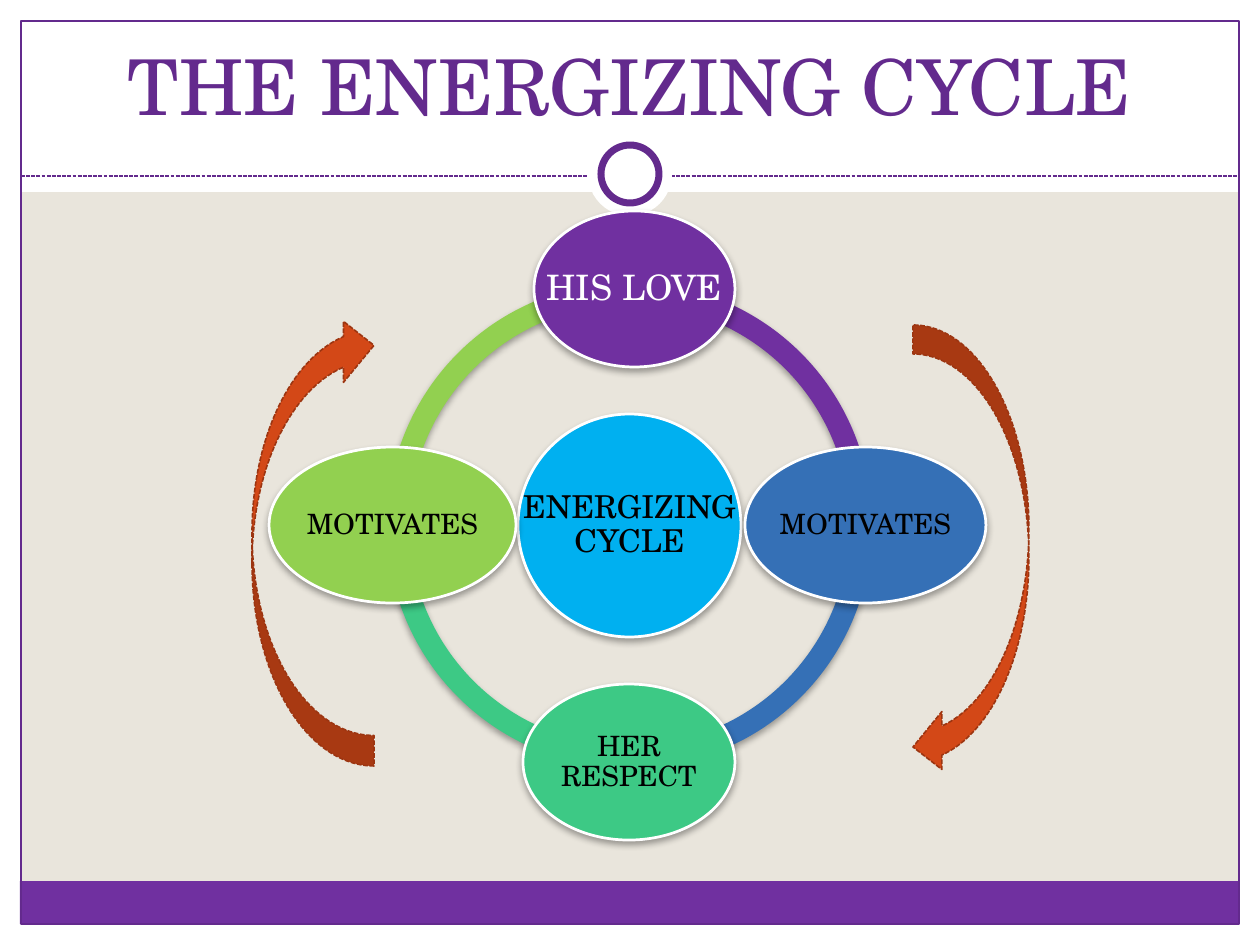
from dataclasses import dataclass

from lxml import etree
from pptx import Presentation
from pptx import util as u
from pptx.dml.color import RGBColor
from pptx.enum import dml, shapes, text
from pptx.oxml.ns import qn

PX = 914400 / 126
WIDTH, HEIGHT = 1260, 945


@dataclass(frozen=True)
class Theme:
    font: str = "TeX Gyre Schola"
    ground: str = "E9E5DC"
    white: str = "FFFFFF"
    black: str = "000000"
    frame: str = "632A8D"
    purple: str = "7030A0"
    blue: str = "3570B6"
    teal: str = "3DC985"
    green: str = "92D050"
    sky: str = "00B0F0"
    arrow: str = "D34817"
    arrow_edge: str = "9C3511"
    title_size: int = 44
    love_size: int = 20
    hub_size: int = 18
    node_size: int = 16


T = Theme()
KIND = shapes.MSO_SHAPE

# Content: boxes are left, top, width, height in px
TITLE = "THE ENERGIZING CYCLE"
TITLE_BOX = (42, 32, 1176, 105)
MARGIN = 21
HEADER_BOTTOM = 192
RULE_Y = 176
FOOTER = (20, 881, 1218, 43)
BADGE_CENTER = (630, 174)

ARC_BAND = 0.046
ARCS = [  # top, start, end, colour
    (282, 107.966, 162.801, T.green),
    (283, 54, 108, T.teal),
    (283, 0, 54, T.blue),
    (282, 162.801, 0.034, T.purple),
]
ARC_LEFT, ARC_SIZE = 387, 485

NODES = [  # label, box, fill, text size, text colour
    ("ENERGIZING CYCLE", (518, 414, 223, 223), T.sky, T.hub_size, T.black),
    ("HIS LOVE", (534, 211, 201, 156), T.purple, T.love_size, T.white),
    ("MOTIVATES", (745, 447, 241, 156), T.blue, T.node_size, T.black),
    ("HER RESPECT", (523, 684, 212, 156), T.teal, T.node_size, T.black),
    ("MOTIVATES", (269, 447, 247, 156), T.green, T.node_size, T.black),
]
NODE_INSET = 4

TURN_ARROWS = [  # kind, box, flipped
    (KIND.CURVED_LEFT_ARROW, (913, 325, 116, 451), False),
    (KIND.CURVED_RIGHT_ARROW, (252, 315, 122, 451), True),
]


def px(n):
    return u.Emu(round(n * PX))


def rgb(color):
    return RGBColor.from_string(color)


def set_line(line, color, width, dashed=False):
    line.color.rgb = rgb(color)
    line.width = u.Pt(width)
    if dashed:
        line.dash_style = dml.MSO_LINE.SQUARE_DOT


def add_form(slide, kind, box, fill=None, line=None, width=0.75, dashed=False):
    form = slide.shapes.add_shape(kind, *map(px, box))
    form.shadow.inherit = False
    if fill:
        form.fill.solid()
        form.fill.fore_color.rgb = rgb(fill)
    else:
        form.fill.background()
    if line:
        set_line(form.line, line, width, dashed)
    else:
        form.line.fill.background()
    return form


def add_soft_shadow(form):
    effects = form.element.spPr.find(qn("a:effectLst"))
    shadow = etree.SubElement(
        effects, qn("a:outerShdw"), blurRad=str(u.Pt(4)), dist=str(u.Pt(2)),
        dir="5400000", rotWithShape="0")
    color = etree.SubElement(shadow, qn("a:srgbClr"), val=T.black)
    etree.SubElement(color, qn("a:alpha"), val="35000")


def add_text(slide, words, box, size, color, anchor, inset=None, spacing=None):
    holder = slide.shapes.add_textbox(*map(px, box))
    frame = holder.text_frame
    frame.word_wrap = True
    frame.vertical_anchor = anchor
    if inset is not None:
        frame.margin_left = frame.margin_right = px(inset)
        frame.margin_top = frame.margin_bottom = px(inset)
    line = frame.paragraphs[0]
    line.alignment = text.PP_ALIGN.CENTER
    if spacing:
        line.line_spacing = spacing
    run = line.add_run()
    run.text = words
    run.font.name = T.font
    run.font.size = u.Pt(size)
    run.font.color.rgb = rgb(color)


def around(center, size):
    return center[0] - size / 2, center[1] - size / 2, size, size


def draw_frame(slide):
    # White margins, footer band and outline
    for box in [
        (0, HEIGHT - MARGIN, WIDTH, MARGIN),
        (0, 0, WIDTH, HEADER_BOTTOM),
        (0, 0, MARGIN, HEIGHT),
        (WIDTH - MARGIN, 0, MARGIN, HEIGHT),
    ]:
        add_form(slide, KIND.RECTANGLE, box, T.white)
    add_form(slide, KIND.RECTANGLE, FOOTER, T.purple)
    outline = (MARGIN, MARGIN, WIDTH - 2 * MARGIN, HEIGHT - 2 * MARGIN)
    add_form(slide, KIND.RECTANGLE, outline, line=T.frame)

    # Header rule and badge
    rule = slide.shapes.add_connector(
        shapes.MSO_CONNECTOR.STRAIGHT,
        px(MARGIN), px(RULE_Y), px(WIDTH - MARGIN), px(RULE_Y))
    set_line(rule.line, T.frame, 0.75, dashed=True)
    etree.SubElement(rule.element.spPr, qn("a:effectLst"))
    add_form(slide, KIND.OVAL, around(BADGE_CENTER, 84), T.white)
    add_form(slide, KIND.OVAL, around(BADGE_CENTER, 58), T.white, T.frame, 4)


def draw_cycle(slide):
    # Ring
    for top, start, end, color in ARCS:
        arc = add_form(slide, KIND.BLOCK_ARC, (ARC_LEFT, top, ARC_SIZE, ARC_SIZE), color)
        for i, value in enumerate((start, end, ARC_BAND)):
            arc.adjustments[i] = value
        add_soft_shadow(arc)

    # Hub and nodes
    for label, box, fill, size, color in NODES:
        node = add_form(slide, KIND.OVAL, box, fill, T.white, 1.57)
        add_soft_shadow(node)
        add_text(slide, label, box, size, color, text.MSO_ANCHOR.MIDDLE,
                 inset=NODE_INSET, spacing=0.9)

    # Turning arrows
    for kind, box, flipped in TURN_ARROWS:
        arrow = add_form(slide, kind, box, T.arrow, T.arrow_edge, 0.9, dashed=True)
        if flipped:
            arrow.element.spPr.xfrm.set("flipV", "1")


def main():
    deck = Presentation()
    deck.slide_width, deck.slide_height = px(WIDTH), px(HEIGHT)
    slide = deck.slides.add_slide(deck.slide_layouts[6])
    slide.background.fill.solid()
    slide.background.fill.fore_color.rgb = rgb(T.ground)
    draw_frame(slide)
    add_text(slide, TITLE, TITLE_BOX, T.title_size, T.frame, text.MSO_ANCHOR.BOTTOM)
    draw_cycle(slide)
    deck.save("out.pptx")


if __name__ == "__main__":
    main()
